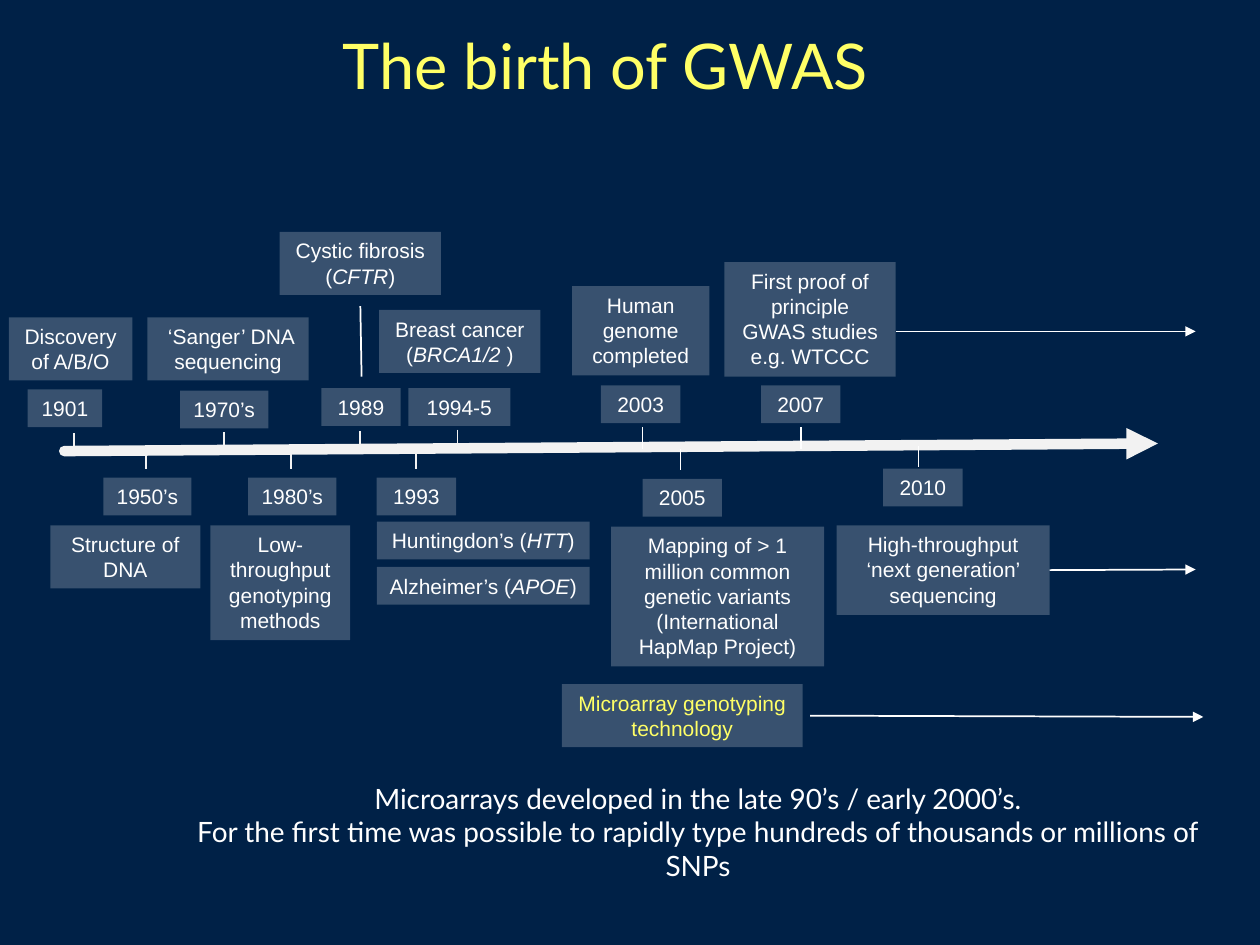
from dataclasses import dataclass

from pptx import Presentation
from pptx.dml.color import RGBColor
from pptx.enum.shapes import MSO_CONNECTOR as CONN, MSO_SHAPE as SHAPE
from pptx.enum.text import MSO_ANCHOR as ANCHOR, PP_ALIGN as ALIGN
from pptx.oxml.ns import qn
from pptx.util import Inches, Pt
from lxml.etree import SubElement


@dataclass(frozen=True)
class Theme:
    navy: RGBColor = RGBColor(0x00, 0x21, 0x47)
    white: RGBColor = RGBColor(0xFF, 0xFF, 0xFF)
    pale: RGBColor = RGBColor(0xF2, 0xF2, 0xF2)
    yellow: RGBColor = RGBColor(0xFF, 0xFF, 0x66)
    box_alpha: int = 22
    heading_font: str = "Lato"
    box_font: str = "Arial"
    title_size: int = 36
    note_size: int = 16
    box_size: int = 12


class Timeline:
    def __init__(self, slide, theme):
        self.s, self.theme = slide, theme
        fill = slide.background.fill
        fill.solid()
        fill.fore_color.rgb = theme.navy

    def fill_text(self, tf, lines, font, size, color):
        """Fill a frame with centred lines; *stars* mark italics."""
        tf.word_wrap = True
        for i, line in enumerate(lines):
            p = tf.paragraphs[0] if i == 0 else tf.add_paragraph()
            p.alignment = ALIGN.CENTER
            for j, part in enumerate(line.split("*")):
                r = p.add_run()
                r.text = part
                r.font.name, r.font.size = font, Pt(size)
                r.font.color.rgb = color
                r.font.italic = j % 2 == 1

    def text(self, lines, x, y, w, h, size, color, anchor=ANCHOR.TOP):
        sp = self.s.shapes.add_textbox(Inches(x), Inches(y), Inches(w), Inches(h))
        sp.text_frame.vertical_anchor = anchor
        self.fill_text(sp.text_frame, lines, self.theme.heading_font, size, color)

    def box(self, text, x, y, w, h=0.3, color=None):
        sp = self.s.shapes.add_shape(SHAPE.RECTANGLE, Inches(x), Inches(y), Inches(w), Inches(h))
        sp.shadow.inherit = False
        sp.line.fill.background()
        sp.fill.solid()
        sp.fill.fore_color.rgb = self.theme.white
        rgb = sp._element.spPr.find(qn("a:solidFill"))[0]
        SubElement(rgb, qn("a:alpha")).set("val", str(self.theme.box_alpha * 1000))
        sp.text_frame.vertical_anchor = ANCHOR.TOP
        self.fill_text(sp.text_frame, text.split("\n"), self.theme.box_font,
                       self.theme.box_size, color or self.theme.white)
        return sp

    def line(self, x1, y1, x2, y2, color=None, width=1, arrow=False, rounded=False):
        c = self.s.shapes.add_connector(CONN.STRAIGHT, Inches(x1), Inches(y1), Inches(x2), Inches(y2))
        c.line.color.rgb = color or self.theme.white
        c.line.width = Pt(width)
        ln = c._element.spPr.find(qn("a:ln"))
        if rounded:
            ln.set("cap", "rnd")
        if arrow:
            SubElement(ln, qn("a:tailEnd")).set("type", "triangle")
        SubElement(c._element.spPr, qn("a:effectLst"))
        return c

    def date(self, text, x, y, w, tick_x, tick_y, color):
        self.box(text, x, y, w)
        self.line(tick_x, tick_y, tick_x, tick_y + 0.17, color)


def main():
    prs = Presentation()
    prs.slide_width, prs.slide_height = Inches(10), Inches(7.5)
    theme = Theme()
    t = Timeline(prs.slides.add_slide(prs.slide_layouts[6]), theme)

    # Title
    t.text(["The birth of GWAS"], 0.99, 0.14, 7.63, 0.74, theme.title_size, theme.yellow, ANCHOR.MIDDLE)

    # Time axis
    t.line(0.51, 3.58, 9.19, 3.52, theme.pale, 6, arrow=True, rounded=True)

    # Dates: label, left, top, width, tick x, tick top, tick colour
    for date in [
        ("1901", 0.22, 3.09, 0.59, 0.59, 3.44, theme.pale),
        ("1950’s", 0.82, 3.79, 0.7, 1.16, 3.55, theme.pale),
        ("1970’s", 1.43, 3.1, 0.7, 1.78, 3.43, theme.pale),
        ("1980’s", 1.97, 3.79, 0.7, 2.31, 3.55, theme.pale),
        ("1989", 2.55, 3.08, 0.63, 2.86, 3.42, theme.pale),
        ("1993", 2.99, 3.79, 0.63, 3.3, 3.55, theme.pale),
        ("1994-5", 3.24, 3.08, 0.81, 3.63, 3.41, theme.pale),
        ("2003", 4.77, 3.06, 0.63, 5.1, 3.39, theme.white),
        ("2005", 5.1, 3.8, 0.63, 5.4, 3.56, theme.white),
        ("2007", 6.04, 3.06, 0.63, 6.36, 3.39, theme.white),
        ("2010", 7.01, 3.72, 0.63, 7.29, 3.54, theme.white),
    ]:
        t.date(*date)

    # Events: text, left, top, width, height
    for event in [
        ("Discovery of A/B/O", 0.07, 2.52, 0.98, 0.5),
        ("Structure of DNA", 0.4, 4.17, 1.19, 0.5),
        (" ‘Sanger’ DNA sequencing", 1.17, 2.52, 1.28, 0.5),
        ("Low-throughput genotyping methods", 1.67, 4.17, 1.11, 0.91),
        ("Cystic fibrosis (*CFTR*)", 2.22, 1.84, 1.28, 0.5),
        ("Huntingdon’s (*HTT*)", 2.99, 4.14, 1.69, 0.3),
        ("Alzheimer’s (*APOE*)", 2.99, 4.5, 1.69, 0.3),
        ("Breast cancer (*BRCA1/2 *)", 3.01, 2.46, 1.28, 0.5),
        ("Human genome completed", 4.54, 2.27, 1.09, 0.71),
        ("Mapping of > 1 million common genetic variants\n(International HapMap Project)",
         4.85, 4.18, 1.69, 1.11),
        ("First proof of principle GWAS studies e.g. WTCCC", 5.75, 2.08, 1.36, 0.91),
    ]:
        t.box(*event)
    t.line(2.86, 2.43, 2.87, 2.99)

    # Technologies and studies that continue to the present
    t.line(7.11, 2.63, 9.49, 2.63, arrow=True)
    sequencing = t.box("High-throughput ‘next generation’ sequencing", 6.64, 4.17, 1.69, 0.71)
    t.line(8.33, 4.52, 9.49, 4.52, arrow=True).begin_connect(sequencing, 3)
    t.box("Microarray genotyping technology", 4.46, 5.43, 1.91, 0.5, theme.yellow)
    t.line(6.43, 5.68, 9.55, 5.69, arrow=True)

    # Closing note
    t.text(["Microarrays developed in the late 90’s / early 2000’s.",
            "For the first time was possible to rapidly type hundreds of thousands or millions of SNPs"],
           1.4, 6.15, 8.28, 0.64, theme.note_size, theme.white)

    prs.save("out.pptx")


if __name__ == "__main__":
    main()
